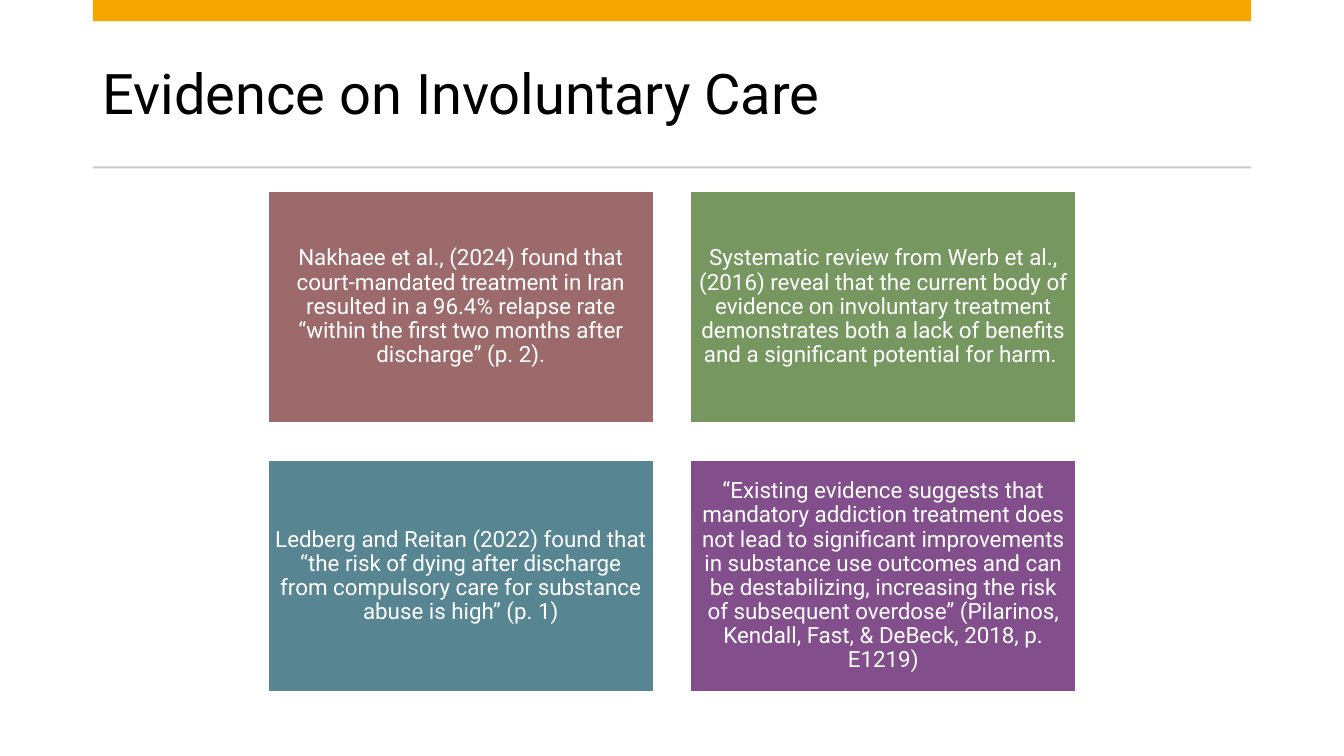
"""Build the slide on evidence about involuntary care."""
from dataclasses import dataclass

from pptx import Presentation
from pptx.dml.color import RGBColor
from pptx.enum.shapes import MSO_SHAPE
from pptx.enum.text import MSO_ANCHOR, PP_ALIGN
from pptx.shapes.autoshape import Shape
from pptx.slide import Slide
from pptx.util import Pt

RECT = MSO_SHAPE.RECTANGLE
MIDDLE = MSO_ANCHOR.MIDDLE
LEFT, CENTER = PP_ALIGN.LEFT, PP_ALIGN.CENTER

PX = 9144
SLIDE_W, SLIDE_H = 1333, 750
MARGIN, CONTENT_W = 92, 1149
GRID_LEFT, GRID_TOP = 266, 190
CARD_W, CARD_H = 382, 229
STEP_X, STEP_Y = 419, 267
COLUMNS = 2
FONT = "Roboto"
COLORS = {
    "white": "FFFFFF",
    "black": "000000",
    "amber": "F5A700",
    "grey": "C9C9C9",
    "rose": "9C6A6A",
    "green": "769860",
    "teal": "578592",
    "purple": "824F8C",
}


@dataclass(frozen=True)
class Box:
    left: int
    top: int
    width: int
    height: int

    def emu(self) -> tuple[int, int, int, int]:
        return (self.left * PX, self.top * PX, self.width * PX, self.height * PX)


@dataclass(frozen=True)
class Card:
    color: str
    text: str


TITLE = Box(MARGIN, 37, CONTENT_W, 118)
TOP_BAR = Box(MARGIN, 0, CONTENT_W, 21)
RULE = Box(MARGIN, 165, CONTENT_W, 2)

CARDS = [
    Card("rose", "Nakhaee et al., (2024) found that court-mandated treatment in Iran "
         "resulted in a 96.4% relapse rate “within the first two months after "
         "discharge” (p. 2)."),
    Card("green", "Systematic review from Werb et al., (2016) reveal that the current "
         "body of evidence on involuntary treatment demonstrates both a lack of "
         "benefits and a significant potential for harm. "),
    Card("teal", "Ledberg and Reitan (2022) found that “the risk of dying after "
         "discharge from compulsory care for substance abuse is high” (p. 1)"),
    Card("purple", "“Existing evidence suggests that mandatory addiction treatment does "
         "not lead to significant improvements in substance use outcomes and can be "
         "destabilizing, increasing the risk of subsequent overdose” (Pilarinos, "
         "Kendall, Fast, & DeBeck, 2018, p. E1219)"),
]


def rgb(name: str) -> RGBColor:
    return RGBColor.from_string(COLORS[name])


def add_rect(s: Slide, box: Box, color: str) -> Shape:
    sp = s.shapes.add_shape(RECT, *box.emu())
    sp.shadow.inherit = False
    sp.fill.solid()
    sp.fill.fore_color.rgb = rgb(color)
    sp.line.fill.background()
    return sp


def write_text(sp: Shape, text: str, size: int, color: str, align: PP_ALIGN) -> None:
    tf = sp.text_frame
    tf.word_wrap = True
    tf.vertical_anchor = MIDDLE
    p = tf.paragraphs[0]
    p.alignment = align
    p.line_spacing = 0.9
    r = p.add_run()
    r.text = text
    r.font.name = FONT
    r.font.size = Pt(size)
    r.font.color.rgb = rgb(color)


def add_card(s: Slide, card: Card, box: Box) -> None:
    sp = add_rect(s, box, card.color)
    sp.line.color.rgb = rgb("white")
    sp.line.width = Pt(1)
    tf = sp.text_frame
    tf.margin_left = tf.margin_right = tf.margin_top = tf.margin_bottom = 7 * PX
    write_text(sp, card.text, 16, "white", CENTER)


def main() -> None:
    prs = Presentation()
    prs.slide_width, prs.slide_height = SLIDE_W * PX, SLIDE_H * PX
    s = prs.slides.add_slide(prs.slide_layouts[6])
    s.background.fill.solid()
    s.background.fill.fore_color.rgb = rgb("white")

    title = s.shapes.add_textbox(*TITLE.emu())
    write_text(title, "Evidence on Involuntary Care", 40, "black", LEFT)
    add_rect(s, TOP_BAR, "amber")
    add_rect(s, RULE, "grey")

    for i, card in enumerate(CARDS):
        row, col = divmod(i, COLUMNS)
        box = Box(GRID_LEFT + col * STEP_X, GRID_TOP + row * STEP_Y, CARD_W, CARD_H)
        add_card(s, card, box)

    prs.save("out.pptx")


if __name__ == "__main__":
    main()
